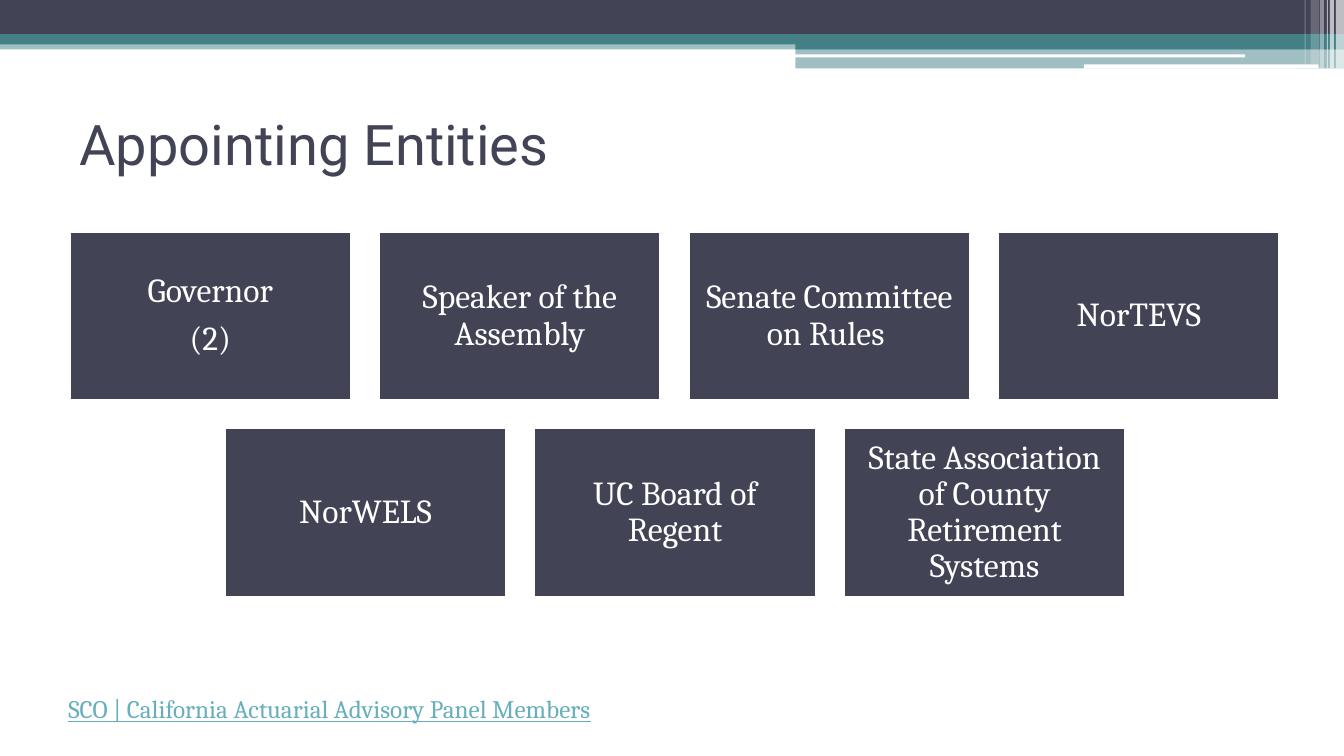
"""Build the Appointing Entities slide with its banner and grid of boxes."""
from lxml import etree
from pptx import Presentation
from pptx.dml.color import RGBColor
from pptx.enum.shapes import MSO_SHAPE
from pptx.enum.text import MSO_ANCHOR, PP_ALIGN
from pptx.oxml.ns import qn
from pptx.util import Inches, Pt

NAVY, TEAL, WHITE, LINK = "424456", "438086", "FFFFFF", "67AFBD"


def add_block(left, top, width, height, color, opacity=100, kind=MSO_SHAPE.RECTANGLE):
    block = slide.shapes.add_shape(
        kind, Inches(left), Inches(top), Inches(width), Inches(height))
    block.shadow.inherit = False
    block.line.fill.background()
    block.fill.solid()
    block.fill.fore_color.rgb = RGBColor.from_string(color)
    if opacity < 100:
        solid_color = block.fill._xPr.find(qn("a:solidFill"))[0]
        etree.SubElement(solid_color, qn("a:alpha"), val=str(opacity * 1000))
    return block


def add_words(paragraph, words, font, size, color):
    run = paragraph.add_run()
    run.text = words
    run.font.name = font
    run.font.size = Pt(size)
    run.font.color.rgb = RGBColor.from_string(color)
    return run


presentation = Presentation()
presentation.slide_width = Inches(13.33)
presentation.slide_height = Inches(7.5)
slide = presentation.slides.add_slide(presentation.slide_layouts[6])

for left, top, width, height, color, opacity in [
    (0, 0.4, 13.33, 0.09, TEAL, 50),
    (0, 0, 13.33, 0.34, NAVY, 100),
    (0, 0.34, 13.33, 0.1, TEAL, 100),
    (7.89, 0.39, 5.44, 0.1, TEAL, 100),
    (7.89, 0.48, 5.44, 0.2, TEAL, 50),
]:
    add_block(left, top, width, height, color, opacity)

for left, top, width, height in [(7.88, 0.54, 4.47, 0.03), (10.75, 0.64, 2.33, 0.04)]:
    add_block(left, top, width, height, WHITE, kind=MSO_SHAPE.ROUNDED_RECTANGLE)

for left, width, height, opacity in [
    (13.25, 0.08, 0.68, 65),
    (13.19, 0.04, 0.68, 65),
    (13.16, 0.01, 0.68, 60),
    (13.09, 0.04, 0.68, 40),
    (13, 0.08, 0.64, 20),
    (12.94, 0.01, 0.64, 30),
]:
    add_block(left, 0, width, height, WHITE, opacity)

title = slide.shapes.add_textbox(Inches(0.69), Inches(0.83), Inches(12), Inches(1.17))
title.text_frame.word_wrap = True
title.text_frame.vertical_anchor = MSO_ANCHOR.MIDDLE
add_words(title.text_frame.paragraphs[0], "Appointing Entities", "Roboto", 40, NAVY)

entity_rows = [
    (0.69, 2.3, [["Governor", "(2)"], ["Speaker of the Assembly"],
                 ["Senate Committee on Rules "], ["NorTEVS"]]),
    (2.23, 4.25, [["NorWELS"], ["UC Board of Regent"],
                  ["State Association of County Retirement Systems"]]),
]
for row_left, row_top, entities in entity_rows:
    for column, entity_lines in enumerate(entities):
        entity = add_block(row_left + column * 3.07, row_top, 2.79, 1.67, NAVY)
        entity.line.color.rgb = RGBColor.from_string(WHITE)
        entity.line.width = Pt(1.5)
        frame = entity.text_frame
        frame.word_wrap = True
        frame.vertical_anchor = MSO_ANCHOR.MIDDLE
        frame.margin_left = frame.margin_right = Inches(0.1)
        frame.margin_top = frame.margin_bottom = Inches(0.1)
        for number, words in enumerate(entity_lines):
            paragraph = frame.add_paragraph() if number else frame.paragraphs[0]
            paragraph.alignment = PP_ALIGN.CENTER
            paragraph.line_spacing = 0.9
            paragraph.space_after = Pt(8.4)
            add_words(paragraph, words, "Cambria", 24, WHITE)

members = slide.shapes.add_textbox(Inches(0.58), Inches(6.83), Inches(6.5), Inches(0.42))
members.text_frame.word_wrap = True
members_run = add_words(members.text_frame.paragraphs[0],
                        "SCO | California Actuarial Advisory Panel Members",
                        "Cambria", 18, LINK)
members_run.font.underline = True

presentation.save("out.pptx")
